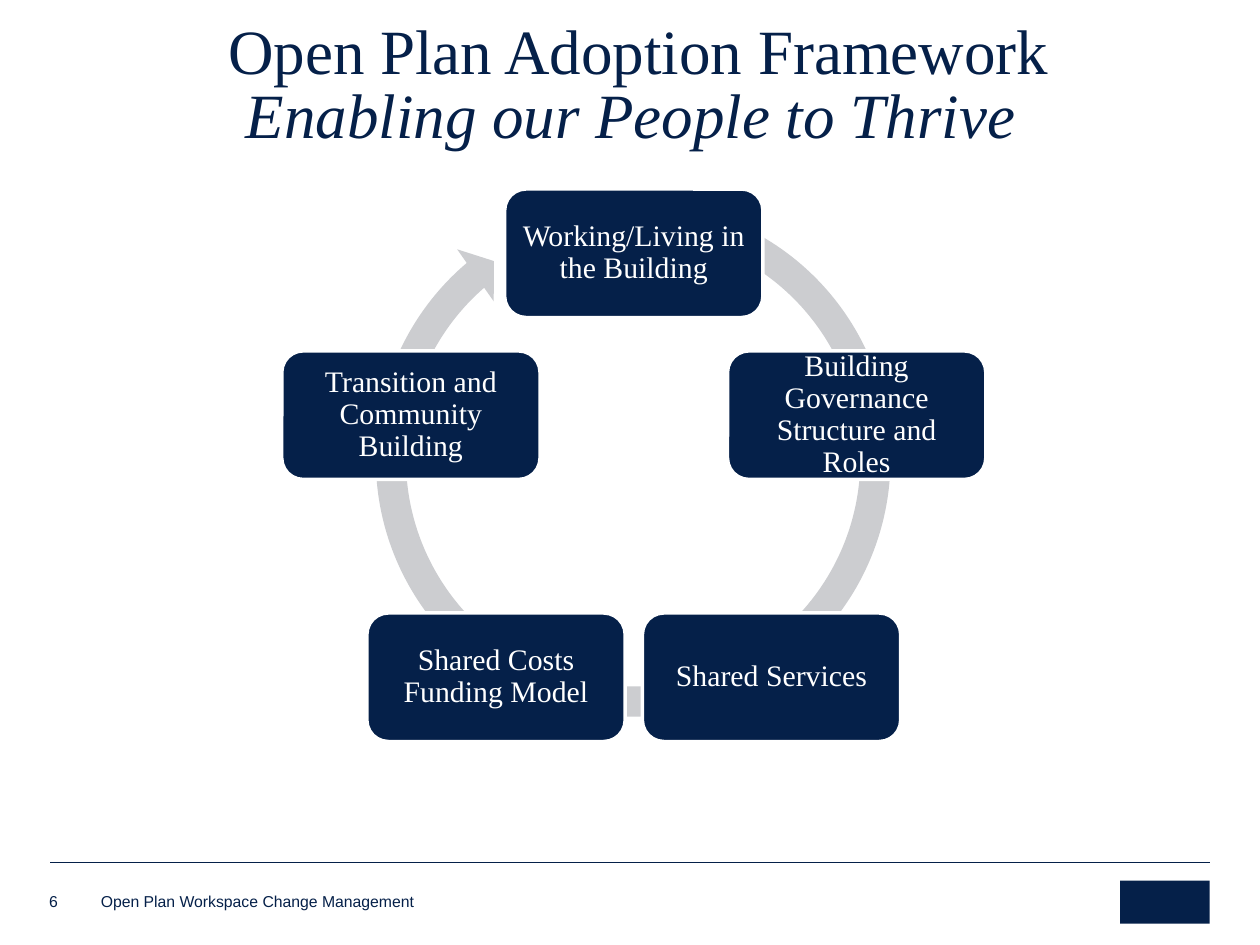
from dataclasses import dataclass
from math import cos, radians, sin

from pptx import Presentation
from pptx import util as u
from pptx.dml.color import RGBColor
from pptx.enum import shapes, text
from pptx.oxml.ns import qn
from lxml import etree

TITLE = (" Open Plan Adoption Framework", "Enabling our People to Thrive")
STAGES = [
    "Working/Living in the Building",
    "Building Governance Structure and Roles",
    "Shared Services",
    "Shared Costs Funding Model",
    "Transition and Community Building",
]
FOOTER = "Open Plan Workspace Change Management"
PAGE = "6"


@dataclass(frozen=True)
class Theme:
    navy: RGBColor = RGBColor(0x05, 0x20, 0x49)
    ring: RGBColor = RGBColor(0xCC, 0xCD, 0xD0)
    white: RGBColor = RGBColor(0xFF, 0xFF, 0xFF)
    serif: str = "Times New Roman"
    sans: str = "Arial"
    title_size: int = 36
    stage_size: int = 17
    footer_size: int = 9


THEME = Theme()
WIDTH, HEIGHT = 10, 7.5
MARGIN = 0.04 * WIDTH
CYCLE_X, CYCLE_Y, CYCLE_RADIUS = 5.03, 3.87, 1.86
STAGE_W, STAGE_H = 2.05, 1.02
RING_BOX = (2.85, 1.47, 4.35, 4.35)
RING_ADJUSTMENTS = (0.055, 3.307, 137.638, 173.933, 0.058)


def inches(*lengths):
    return [u.Inches(length) for length in lengths]


def style(paragraph, font_name, size, color):
    for run in paragraph.runs:
        run.font.name = font_name
        run.font.size = u.Pt(size)
        run.font.color.rgb = color


def set_insets(frame, inset):
    frame.margin_left = frame.margin_right = u.Inches(inset)
    frame.margin_top = frame.margin_bottom = u.Inches(inset)


def add_filled(slide, kind, box, color):
    shape = slide.shapes.add_shape(kind, *inches(*box))
    shape.shadow.inherit = False
    shape.fill.solid()
    shape.fill.fore_color.rgb = color
    shape.line.fill.background()
    return shape


def add_title(slide):
    title = slide.shapes.title
    title.left, title.top, title.width, title.height = inches(0.17, 0.11, 9.67, 1.14)
    frame = title.text_frame
    frame.text = "\v".join(TITLE)
    frame.word_wrap = True
    frame.auto_size = text.MSO_AUTO_SIZE.NONE
    frame.vertical_anchor = text.MSO_ANCHOR.BOTTOM
    heading = frame.paragraphs[0]
    heading.alignment = text.PP_ALIGN.CENTER
    heading.line_spacing = 0.85
    style(heading, THEME.serif, THEME.title_size, THEME.navy)
    heading.runs[-1].font.italic = True


def add_stage(slide, label, angle):
    """Place one stage on the cycle, with angle in degrees clockwise from the top."""
    center_x = CYCLE_X + CYCLE_RADIUS * sin(radians(angle))
    center_y = CYCLE_Y - CYCLE_RADIUS * cos(radians(angle))
    box = (center_x - STAGE_W / 2, center_y - STAGE_H / 2, STAGE_W, STAGE_H)
    stage = add_filled(slide, shapes.MSO_SHAPE.ROUNDED_RECTANGLE, box, THEME.navy)
    stage.line.color.rgb = THEME.white
    stage.line.width = u.Pt(2)
    frame = stage.text_frame
    frame.text = label
    frame.word_wrap = True
    frame.vertical_anchor = text.MSO_ANCHOR.MIDDLE
    set_insets(frame, 0.07)
    caption = frame.paragraphs[0]
    caption.alignment = text.PP_ALIGN.CENTER
    caption.line_spacing = 0.9
    style(caption, THEME.serif, THEME.stage_size, THEME.white)


def add_cycle(slide):
    ring = add_filled(slide, shapes.MSO_SHAPE.CIRCULAR_ARROW, RING_BOX, THEME.ring)
    for index, value in enumerate(RING_ADJUSTMENTS):
        ring.adjustments[index] = value
    for index, label in enumerate(STAGES):
        add_stage(slide, label, index * 360 / len(STAGES))


def add_footer_text(slide, label, box):
    frame = slide.shapes.add_textbox(*inches(*box)).text_frame
    frame.text = label
    frame.word_wrap = True
    frame.vertical_anchor = text.MSO_ANCHOR.BOTTOM
    set_insets(frame, 0)
    style(frame.paragraphs[0], THEME.sans, THEME.footer_size, THEME.navy)


def add_footer(slide):
    rule = slide.shapes.add_connector(
        shapes.MSO_CONNECTOR.STRAIGHT, *inches(MARGIN, 6.84, WIDTH - MARGIN, 6.84))
    rule.line.color.rgb = THEME.navy
    rule.line.width = u.Pt(0.25)
    etree.SubElement(rule._element.spPr, qn("a:effectLst"))
    add_filled(slide, shapes.MSO_SHAPE.RECTANGLE, (8.89, 6.99, 0.71, 0.34), THEME.navy)
    add_footer_text(slide, FOOTER, (0.8, 7.08, 4.71, 0.15))
    add_footer_text(slide, PAGE, (0.39, 7.06, 0.27, 0.17))


def main():
    deck = Presentation()
    deck.slide_width, deck.slide_height = inches(WIDTH, HEIGHT)
    slide = deck.slides.add_slide(deck.slide_layouts[5])
    add_title(slide)
    add_cycle(slide)
    add_footer(slide)
    deck.save("out.pptx")


if __name__ == "__main__":
    main()
